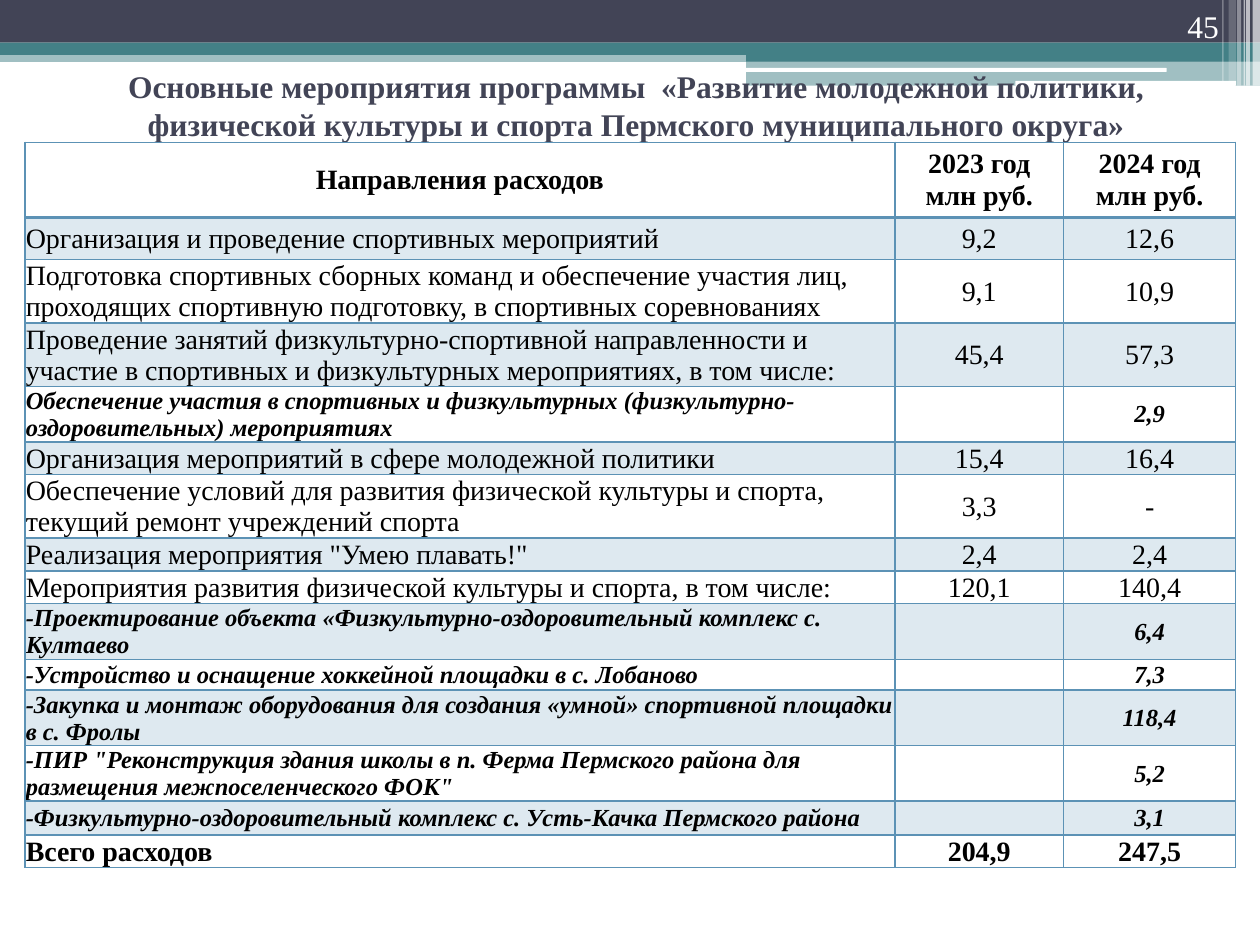
from lxml.etree import SubElement
from pptx import Presentation
from pptx.dml.color import RGBColor
from pptx.enum.shapes import MSO_SHAPE as Shape
from pptx.enum.text import MSO_ANCHOR as Anchor, MSO_AUTO_SIZE as AutoSize, PP_ALIGN as Align
from pptx.oxml.ns import qn
from pptx.util import Cm, Pt

FONT = "Times New Roman"
DARK, TEAL, WHITE, BLACK, BLUE = "424456", "438086", "FFFFFF", "000000", "5C92B5"

TITLE = ("Основные мероприятия программы  «Развитие молодежной политики, "
         "физической культуры и спорта Пермского муниципального округа»")
PAGE = "45"

# left, top, width, height (cm), colour, opacity in percent
BANDS = [
    (0, 1.02, 25.4, 0.23, TEAL, 50),
    (0, 0, 25.4, 0.86, DARK, 100),
    (0, 0.86, 25.4, 0.25, TEAL, 100),
    (15.04, 0.99, 10.36, 0.25, TEAL, 100),
    (15.04, 1.22, 10.36, 0.51, TEAL, 50),
]
PILLS = [
    (15.01, 1.37, 8.51, 0.08, WHITE, 100),
    (20.47, 1.63, 4.45, 0.1, WHITE, 100),
]
STRIPES = [
    (25.25, 0, 0.15, 1.73, WHITE, 65),
    (25.12, 0, 0.08, 1.73, WHITE, 65),
    (25.07, 0, 0.03, 1.73, WHITE, 60),
    (24.94, 0, 0.08, 1.73, WHITE, 40),
    (24.77, 0, 0.15, 1.63, WHITE, 20),
    (24.64, 0, 0.03, 1.63, WHITE, 30),
]

# size, bold, italic
STYLES = {
    "head": (16, True, False),
    "item": (16, False, False),
    "detail": (14, True, True),
    "total": (16, True, False),
}
# style, row height (cm), direction of spending, 2023, 2024
ROWS = [
    ("head", 1.52, "Направления расходов", "2023 год\nмлн руб.", "2024 год\nмлн руб."),
    ("item", 0.84, "Организация и проведение спортивных мероприятий", "9,2", "12,6"),
    ("item", 1.28, "Подготовка спортивных сборных команд и обеспечение участия лиц, "
     "проходящих спортивную подготовку, в спортивных соревнованиях", "9,1", "10,9"),
    ("item", 1.28, "Проведение занятий физкультурно-спортивной направленности и "
     "участие в спортивных и физкультурных мероприятиях, в том числе:", "45,4", "57,3"),
    ("detail", 1.12, "Обеспечение участия в спортивных и физкультурных "
     "(физкультурно-оздоровительных) мероприятиях", "", "2,9"),
    ("item", 0.66, "Организация мероприятий в сфере молодежной политики", "15,4", "16,4"),
    ("item", 1.28, "Обеспечение условий для развития физической культуры и спорта, "
     "текущий ремонт учреждений спорта", "3,3", "-"),
    ("item", 0.66, 'Реализация мероприятия "Умею плавать!"', "2,4", "2,4"),
    ("item", 0.66, "Мероприятия развития физической культуры и спорта, в том числе:",
     "120,1", "140,4"),
    ("detail", 1.12, "-Проектирование объекта «Физкультурно-оздоровительный комплекс "
     "с. Култаево", "", "6,4"),
    ("detail", 0.57, "-Устройство и оснащение хоккейной площадки в с. Лобаново", "", "7,3"),
    ("detail", 1.12, "-Закупка и монтаж оборудования для создания «умной» спортивной "
     "площадки в с. Фролы", "", "118,4"),
    ("detail", 1.12, '-ПИР "Реконструкция здания школы в п. Ферма Пермского района для '
     'размещения межпоселенческого ФОК"', "", "5,2"),
    ("detail", 0.68, "-Физкультурно-оздоровительный комплекс с. Усть-Качка Пермского района",
     "", "3,1"),
    ("total", 0.66, "Всего расходов", "204,9", "247,5"),
]
COLUMN_WIDTHS = [17.54, 3.4, 3.47]


def paint(fill, colour, opacity=100):
    fill.solid()
    fill.fore_color.rgb = RGBColor.from_string(colour)
    if opacity < 100:
        colour_xml = fill._xPr.find(qn("a:solidFill"))[0]
        SubElement(colour_xml, qn("a:alpha"), val=str(opacity * 1000))


def write(frame, text, align, size, colour, bold=False, italic=False):
    frame.text = text
    for paragraph in frame.paragraphs:
        paragraph.alignment = align
        for run in paragraph.runs:
            font = run.font
            font.name, font.size, font.bold, font.italic = FONT, Pt(size), bold, italic
            font.color.rgb = RGBColor.from_string(colour)
        if not paragraph.runs:
            SubElement(paragraph._p, qn("a:endParaRPr"), sz=str(size * 100))


def add_bars(slide, kind, bars):
    for *place, colour, opacity in bars:
        bar = slide.shapes.add_shape(kind, *map(Cm, place))
        bar.shadow.inherit = False
        bar.line.fill.background()
        paint(bar.fill, colour, opacity)


def set_borders(cell, top, bottom):
    """Draw all four sides; top and bottom are widths in points."""
    properties = cell._tc.get_or_add_tcPr()
    sides = (("lnL", 1), ("lnR", 1), ("lnT", top), ("lnB", bottom))
    for position, (side, width) in enumerate(sides):
        line = SubElement(properties, qn(f"a:{side}"), w=str(Pt(width)))
        solid = SubElement(line, qn("a:solidFill"))
        SubElement(solid, qn("a:srgbClr"), val=BLUE)
        properties.insert(position, line)


def add_expenses(slide):
    heights = [row[1] for row in ROWS]
    table = slide.shapes.add_table(
        len(ROWS), len(COLUMN_WIDTHS), Cm(0.5), Cm(2.87),
        Cm(sum(COLUMN_WIDTHS)), Cm(sum(heights))).table
    table.horz_banding = False
    for column, width in zip(table.columns, COLUMN_WIDTHS):
        column.width = Cm(width)
    for r, (style, height, *texts) in enumerate(ROWS):
        table.rows[r].height = Cm(height)
        for c, text in enumerate(texts):
            cell = table.cell(r, c)
            cell.vertical_anchor = Anchor.MIDDLE
            if r > 0:
                cell.margin_left = cell.margin_right = cell.margin_top = Cm(0.02)
                cell.margin_bottom = 0
            if r % 2:
                paint(cell.fill, BLUE, 20)
            else:
                cell.fill.background()
            set_borders(cell, 2 if r == 1 else 1, 2 if r == 0 else 1)
            align = Align.LEFT if r and c == 0 else Align.CENTER
            size, bold, italic = STYLES[style]
            write(cell.text_frame, text, align, size, BLACK, bold, italic)


def main():
    deck = Presentation()
    deck.slide_width, deck.slide_height = Cm(25.4), Cm(19.05)
    slide = deck.slides.add_slide(deck.slide_layouts[5])
    add_bars(slide, Shape.RECTANGLE, BANDS)
    add_bars(slide, Shape.ROUNDED_RECTANGLE, PILLS)
    add_bars(slide, Shape.RECTANGLE, STRIPES)

    title = slide.shapes.title
    title.left, title.top, title.width, title.height = map(Cm, (0.71, 1.52, 24.23, 1.19))
    title.text_frame.auto_size = AutoSize.NONE
    title.text_frame.vertical_anchor = Anchor.MIDDLE
    write(title.text_frame, TITLE, Align.CENTER, 18, DARK, bold=True)
    slide.shapes._spTree.append(title._element)  # in front of the bands

    add_expenses(slide)

    page = slide.shapes.add_textbox(*map(Cm, (22.71, 0, 2.11, 1.02))).text_frame
    page.word_wrap = True
    page.vertical_anchor = Anchor.BOTTOM
    write(page, PAGE, Align.RIGHT, 18, WHITE)
    deck.save("out.pptx")


if __name__ == "__main__":
    main()
